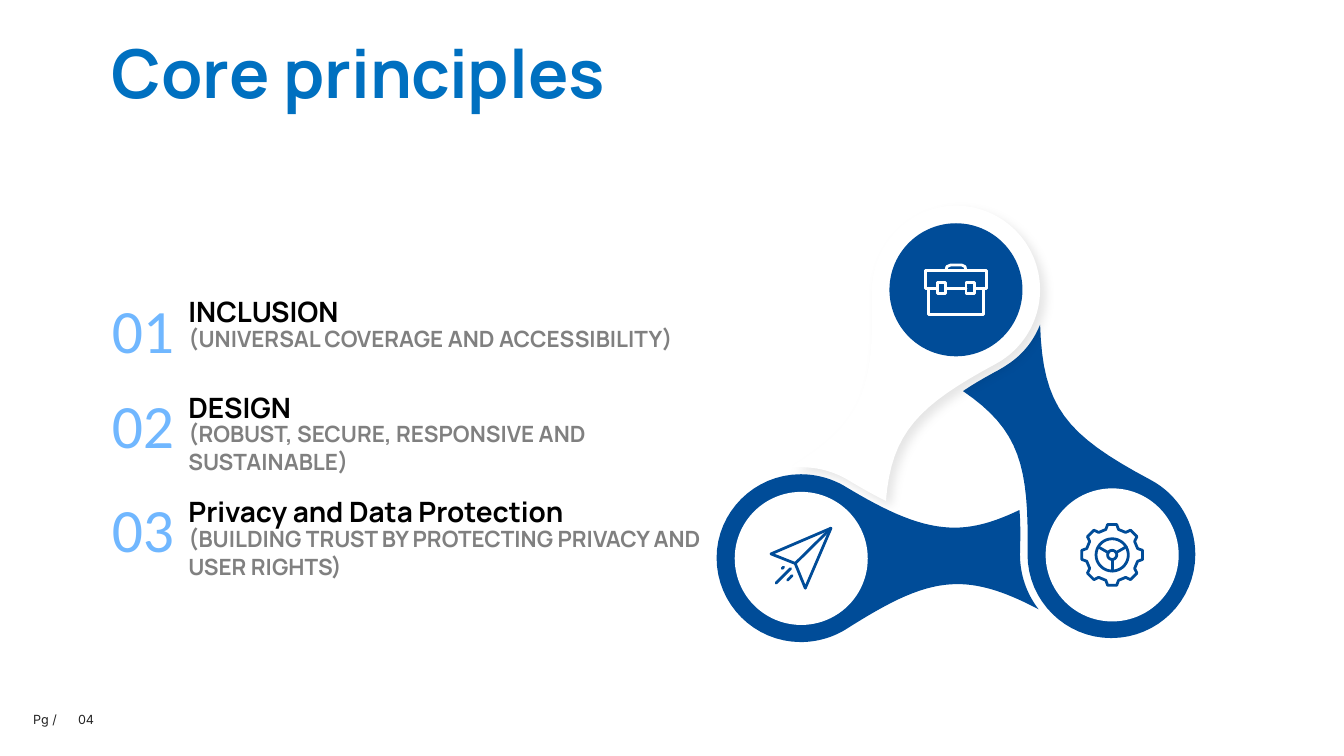
import math

import lxml.etree
import pptx
import pptx.dml.color
import pptx.enum.shapes
import pptx.enum.text
import pptx.oxml.ns
import pptx.util

Inches = pptx.util.Inches
qn = pptx.oxml.ns.qn

COLORS = {
    "title": "0070C0", "navy": "004C98", "sky": "70B7FF", "gray": "808080",
    "black": "000000", "foot": "222222", "white": "FFFFFF",
}

ROWS = [
    (5.74, "01", "INCLUSION", "(UNIVERSAL COVERAGE AND ACCESSIBILITY)", 0.63),
    (7.63, "02", "DESIGN", "(ROBUST, SECURE, RESPONSIVE AND SUSTAINABLE)", 1.21),
    (9.7, "03", "Privacy and Data Protection",
     "(BUILDING TRUST BY PROTECTING PRIVACY AND USER RIGHTS)", 1.21),
]

# Each arm is a start point followed by cubic curves (two handles and an end).
RIGHT_ARM = [
    (22.05, 12.66),
    (21.14, 12.66, 20.39, 11.92, 20.39, 11), (20.42, 9.25, 20.24, 8.53, 19.11, 7.76),
    (19.3, 7.63, 19.54, 7.49, 19.82, 7.34), (20.03, 7.22, 20.2, 7.1, 20.36, 6.91),
    (20.48, 6.77, 20.57, 6.61, 20.64, 6.44), (20.69, 8.07, 21.14, 8.62, 22.83, 9.52),
    (23.38, 9.81, 23.72, 10.38, 23.72, 11), (23.72, 11.92, 22.97, 12.66, 22.05, 12.66),
]
TOP_ARM = [
    (17.58, 9.94),
    (17.36, 9.83, 17.12, 9.7, 16.84, 9.53), (16.54, 9.35, 16.22, 9.27, 15.89, 9.27),
    (15.82, 9.27, 15.74, 9.27, 15.67, 9.28), (17.1, 8.41, 17.36, 7.75, 17.3, 5.79),
    (17.3, 4.83, 18.05, 4.08, 18.97, 4.08), (19.89, 4.08, 20.64, 4.83, 20.64, 5.75),
    (20.64, 6.36, 20.3, 6.93, 19.76, 7.22), (18.24, 8.04, 17.69, 8.57, 17.58, 9.94),
]
LEFT_ARM = [
    (15.89, 12.74),
    (14.97, 12.74, 14.22, 11.99, 14.22, 11.07), (14.22, 10.16, 14.97, 9.41, 15.89, 9.41),
    (16.19, 9.41, 16.49, 9.49, 16.75, 9.64), (17.61, 10.16, 18.28, 10.47, 18.94, 10.47),
    (19.33, 10.47, 19.73, 10.36, 20.23, 10.12), (20.25, 10.35, 20.25, 10.62, 20.24, 11),
    (20.24, 11.4, 20.37, 11.78, 20.61, 12.09), (20.02, 11.78, 19.51, 11.59, 19, 11.59),
    (18.32, 11.59, 17.68, 11.92, 16.78, 12.49), (16.52, 12.65, 16.21, 12.74, 15.89, 12.74),
]


def tint(name):
    return pptx.dml.color.RGBColor.from_string(COLORS[name])


def place(shape, left, top, width, height):
    shape.left, shape.top = Inches(left), Inches(top)
    shape.width, shape.height = Inches(width), Inches(height)


def write(shape, text, size, font, color, bold=False, space=None):
    frame = shape.text_frame
    frame.word_wrap = True
    frame.auto_size = pptx.enum.text.MSO_AUTO_SIZE.SHAPE_TO_FIT_TEXT
    frame.vertical_anchor = pptx.enum.text.MSO_ANCHOR.TOP
    frame.text = text
    line = frame.paragraphs[0]
    line.alignment = pptx.enum.text.PP_ALIGN.LEFT
    if space:
        line.line_spacing = space
    for run in line.runs:
        run.font.size = pptx.util.Pt(size)
        run.font.name = font
        run.font.bold = bold
        run.font.color.rgb = tint(color)


def add_text(slide, box, *style, **more):
    shape = slide.shapes.add_textbox(*map(Inches, box))
    write(shape, *style, **more)
    return shape


def add_tab(shape, where):
    props = shape.text_frame.paragraphs[0]._p.get_or_add_pPr()
    tabs = lxml.etree.SubElement(props, qn("a:tabLst"))
    lxml.etree.SubElement(tabs, qn("a:tab"), pos=str(Inches(where)), algn="l")


def curve(path, steps=16):
    """Turn a start point and cubic curves into a list of points."""
    points = [path[0]]
    for ax, ay, bx, by, ex, ey in path[1:]:
        sx, sy = points[-1]
        for step in range(1, steps + 1):
            t = step / steps
            u = 1 - t
            points.append(tuple(
                u**3 * s + 3 * u * u * t * a + 3 * u * t * t * b + t**3 * e
                for s, a, b, e in ((sx, ax, bx, ex), (sy, ay, by, ey))))
    return points


def trace(slide, parts):
    """Draw (points, closed) outlines as one freeform."""
    build = None
    for points, closed in parts:
        first, *rest = [(Inches(x), Inches(y)) for x, y in points]
        if build is None:
            build = slide.shapes.build_freeform(*first)
        else:
            build.move_to(*first)
        build.add_line_segments(rest, close=closed)
    shape = build.convert_to_shape()
    shape.shadow.inherit = False
    return shape


def fill(shape, color):
    shape.shadow.inherit = False
    shape.fill.solid()
    shape.fill.fore_color.rgb = tint(color)
    shape.line.fill.background()


def add_arm(slide, path, color):
    shape = trace(slide, [(curve(path), True)])
    fill(shape, color)
    return shape


def add_shade(shape):
    effects = shape._element.spPr.find(qn("a:effectLst"))
    shade = lxml.etree.SubElement(
        effects, qn("a:outerShdw"), blurRad=str(pptx.util.Pt(15)),
        dist=str(pptx.util.Pt(10)), dir="2700000", algn="tl", rotWithShape="0")
    black = lxml.etree.SubElement(shade, qn("a:srgbClr"), val=COLORS["black"])
    lxml.etree.SubElement(black, qn("a:alpha"), val="10000")


def add_disc(slide, left, top, color):
    kind = pptx.enum.shapes.MSO_SHAPE.OVAL
    fill(slide.shapes.add_shape(kind, *map(Inches, (left, top, 2.64, 2.64))), color)


def add_icon(slide, parts, color):
    shape = trace(slide, parts)
    shape.fill.background()
    shape.line.color.rgb = tint(color)
    shape.line.width = pptx.util.Pt(4)
    pen = shape.line._get_or_add_ln()
    pen.set("cap", "rnd")
    lxml.etree.SubElement(pen, qn("a:round"))


def plane():
    nose, notch = (16.49, 10.48), (15.78, 11.18)
    return [
        ([nose, (15.98, 11.67), notch, (15.3, 10.99)], True),
        ([nose, notch], False),
        ([(15.72, 11.42), (15.63, 11.51)], False),
        ([(15.69, 11.28), (15.4, 11.57)], False),
        ([(15.55, 11.25), (15.52, 11.28)], False),
    ]


def gear(mid_x=22.07, mid_y=11.01):
    def spot(reach, angle):
        turn = math.radians(angle)
        return mid_x + reach * math.cos(turn), mid_y + reach * math.sin(turn)

    tooth = [(0.52, -14), (0.61, -8.5), (0.61, 8.5), (0.52, 14)]
    rim = [spot(r, a + turn) for turn in range(0, 360, 45) for r, a in tooth]
    rings = [[spot(r, a) for a in range(0, 360, 10)] for r in (0.32, 0.09)]
    spokes = [[spot(0.09, a), spot(0.32, a)] for a in (90, 210, 330)]
    return [(p, True) for p in [rim, *rings]] + [(p, False) for p in spokes]


def case():
    lid = [(18.6, 5.72), (18.37, 5.72), (18.37, 5.37),
           (19.58, 5.37), (19.58, 5.72), (19.35, 5.72)]
    body = [(18.42, 5.72), (18.42, 6.24), (19.52, 6.24), (19.52, 5.72)]
    grip = [(18.77, 5.37), (18.79, 5.29), (18.86, 5.26),
            (19.09, 5.26), (19.15, 5.29), (19.17, 5.37)]
    bar = [(18.77, 5.72), (19.17, 5.72)]
    clasps = [[(x, 5.6), (x + 0.17, 5.6), (x + 0.17, 5.83), (x, 5.83)]
              for x in (18.6, 19.17)]
    return [(p, False) for p in (lid, body, grip, bar)] + [(p, True) for p in clasps]


def main():
    deck = pptx.Presentation()
    deck.slide_width, deck.slide_height = Inches(26.67), Inches(15)
    slide = deck.slides.add_slide(deck.slide_layouts[5])

    title = slide.shapes.title
    place(title, 2.12, 0.89, 11.21, 1.47)
    write(title, "Core principles", 96, "Manrope", "title", bold=True, space=0.8)
    page = add_text(slide, (0.56, 14.08, 2.1, 0.4), "Pg /\t04", 18, "Inter", "foot")
    add_tab(page, 0.89)

    for top, number, head, note, height in ROWS:
        add_text(slide, (3.64, top + 0.64, 10.58, height), note, 32, "Manrope",
                 "gray", bold=True, space=pptx.util.Pt(40))
        add_text(slide, (3.64, top + 0.06, 10.58, 0.79), head, 40, "Manrope",
                 "black", bold=True)
        add_text(slide, (2.12, top, 1.62, 1.61), number, 88, "Calibri", "sky")

    add_arm(slide, RIGHT_ARM, "navy")
    add_shade(add_arm(slide, TOP_ARM, "white"))
    add_arm(slide, LEFT_ARM, "navy")

    add_disc(slide, 20.75, 9.69, "white")
    add_disc(slide, 17.65, 4.43, "navy")
    add_disc(slide, 14.58, 9.76, "white")
    add_icon(slide, plane(), "navy")
    add_icon(slide, gear(), "navy")
    add_icon(slide, case(), "white")

    deck.save("out.pptx")


if __name__ == "__main__":
    main()
